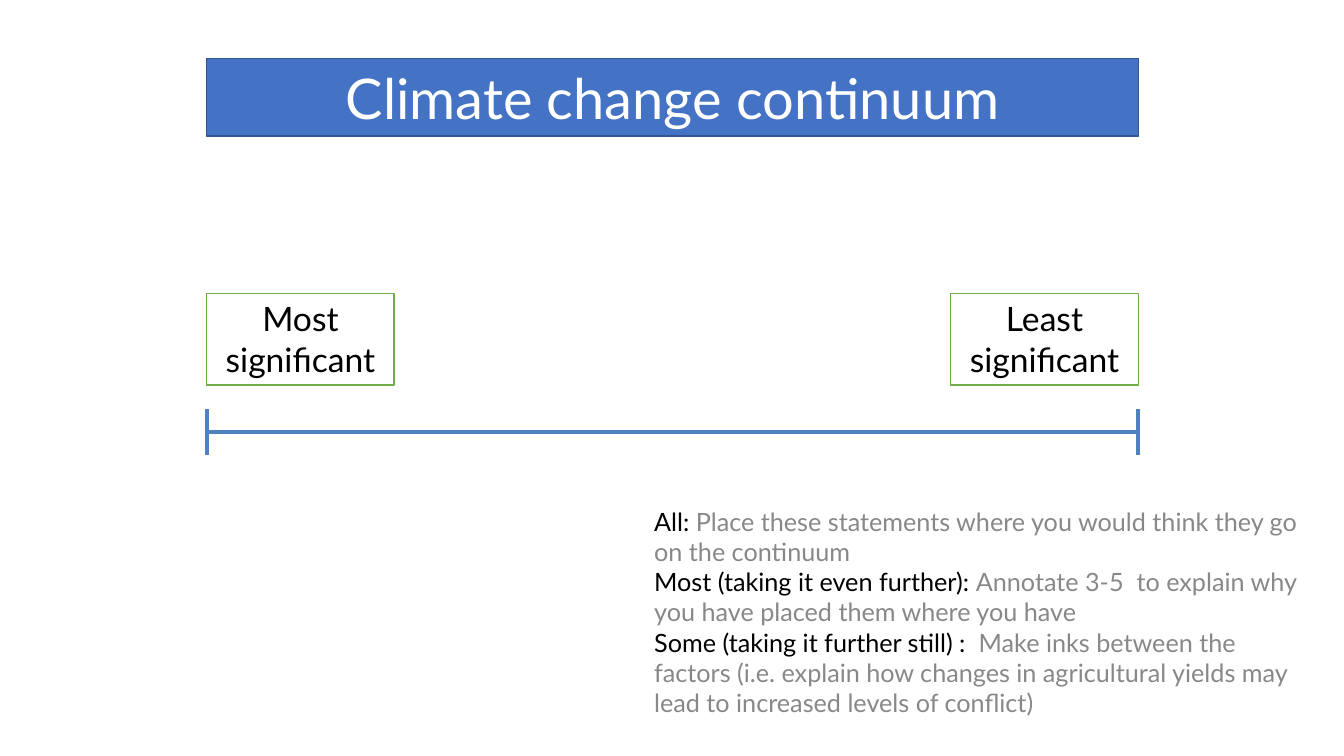
from lxml.etree import SubElement
from pptx import Presentation
from pptx.dml.color import RGBColor
from pptx.enum.shapes import MSO_CONNECTOR, MSO_SHAPE
from pptx.enum.text import MSO_ANCHOR, PP_ALIGN
from pptx.oxml.ns import qn
from pptx.util import Inches, Pt

LEFT, RIGHT = 2.05, 11.29
LABEL_WIDTH = 1.86
SCALE_TOP, SCALE_BOTTOM = 4.06, 4.51
SCALE_MIDDLE = (SCALE_TOP + SCALE_BOTTOM) / 2
BLACK, GREY, WHITE = "000000", "888888", "FFFFFF"
TASKS = [
    ("All:", " Place these statements where you would think they go on the continuum"),
    ("Most (taking it even further): ",
     "Annotate 3-5  to explain why you have placed them where you have"),
    ("Some (taking it further still) :",
     "  Make inks between the  factors (i.e. explain how changes in "
     "agricultural yields may lead to increased levels of conflict)"),
]


def color(value):
    """Turn a hex string into a colour."""
    return RGBColor.from_string(value)


def apply(target, formats):
    """Set each attribute of the target from a dict of format values."""
    for attribute, value in formats.items():
        setattr(target, attribute, value)


def add_words(paragraph, words, size, ink):
    """Add a run of text to a paragraph."""
    run = paragraph.add_run()
    run.text = words
    apply(run.font, {"name": "Lato", "size": Pt(size)})
    run.font.color.rgb = color(ink)


def add_panel(slide, bounds, words, size, ink, fill, outline, anchor):
    """Add a filled rectangle with centred text."""
    panel = slide.shapes.add_shape(MSO_SHAPE.RECTANGLE, *map(Inches, bounds))
    panel.shadow.inherit = False
    panel.fill.solid()
    panel.fill.fore_color.rgb = color(fill)
    panel.line.color.rgb = color(outline)
    panel.line.width = Pt(1)
    apply(panel.text_frame, {"word_wrap": True, "vertical_anchor": anchor})
    paragraph = panel.text_frame.paragraphs[0]
    paragraph.alignment = PP_ALIGN.CENTER
    add_words(paragraph, words, size, ink)


def add_rule(slide, start, end):
    """Add one straight line of the scale."""
    rule = slide.shapes.add_connector(
        MSO_CONNECTOR.STRAIGHT, *map(Inches, start + end))
    rule.line.color.rgb = color("4F81BD")
    rule.line.width = Pt(3)
    SubElement(rule._element.spPr, qn("a:effectLst"))


def add_tasks(slide, bounds):
    """Add the task list, each task on a new line of one paragraph."""
    box = slide.shapes.add_textbox(*map(Inches, bounds))
    box.text_frame.word_wrap = True
    paragraph = box.text_frame.paragraphs[0]
    for position, (audience, task) in enumerate(TASKS):
        if position:
            paragraph.add_line_break()
        add_words(paragraph, audience, 18, BLACK)
        add_words(paragraph, task, 18, GREY)


def main():
    """Build the slide and save it."""
    deck = Presentation()
    apply(deck, {"slide_width": Inches(13.33), "slide_height": Inches(7.5)})
    slide = deck.slides.add_slide(deck.slide_layouts[6])
    add_panel(slide, (LEFT, 0.58, RIGHT - LEFT, 0.77), "Climate change continuum",
              40, WHITE, "4472C4", "325491", MSO_ANCHOR.MIDDLE)
    add_rule(slide, (LEFT, SCALE_MIDDLE), (RIGHT, SCALE_MIDDLE))
    for end, label_left, label in ((LEFT, LEFT, "Most significant"),
                                   (RIGHT, RIGHT - LABEL_WIDTH, "Least significant")):
        add_rule(slide, (end, SCALE_TOP), (end, SCALE_BOTTOM))
        add_panel(slide, (label_left, 2.91, LABEL_WIDTH, 0.91), label,
                  24, BLACK, WHITE, "70AD47", MSO_ANCHOR.TOP)
    add_tasks(slide, (6.39, 4.97, 6.67, 2.22))
    deck.save("out.pptx")


if __name__ == "__main__":
    main()
